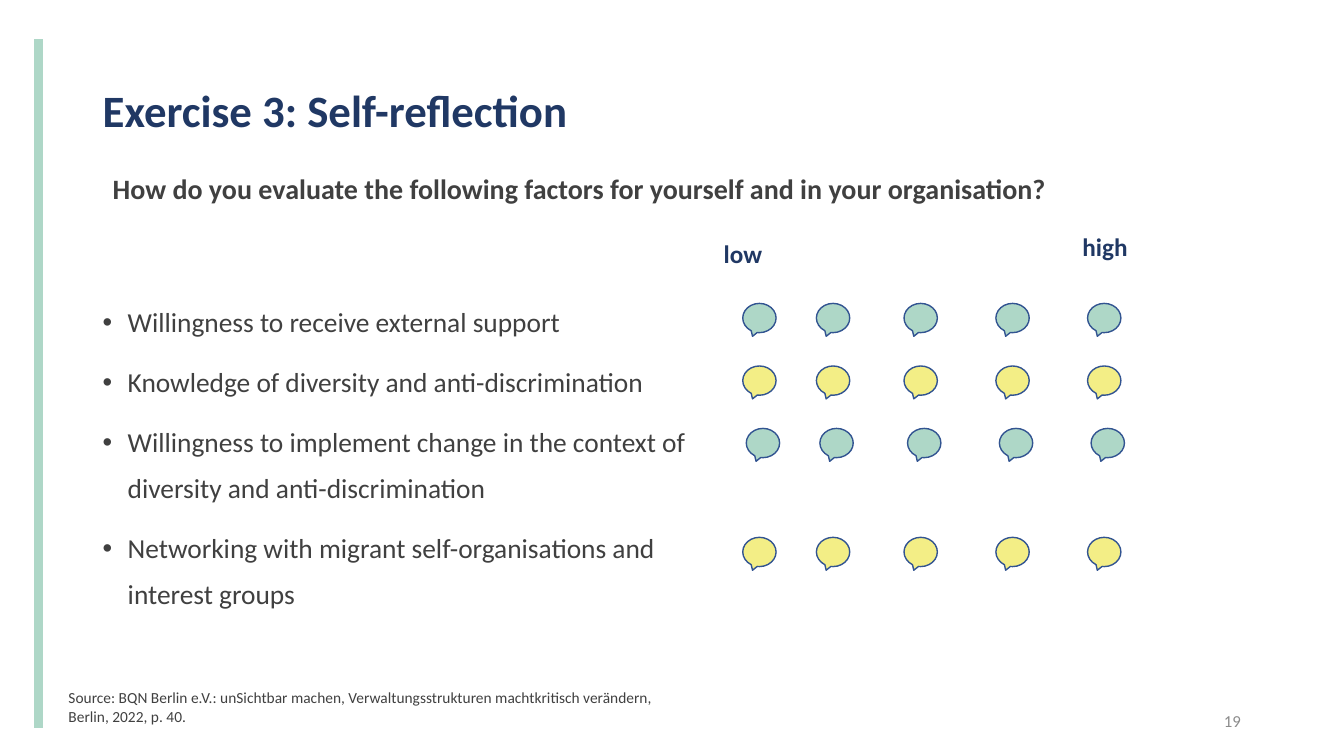
"""Build the self-reflection exercise slide with its rating scale."""
from lxml import etree
from pptx import Presentation
from pptx.dml.color import RGBColor
from pptx.enum import shapes, text
from pptx.oxml import ns
from pptx.util import Pt

FONT = "Calibri"
NAVY, GREY, PALE_GREY = "203864", "404040", "8C8C8C"
GREEN, YELLOW, OUTLINE = "AED7C7", "F3EE86", "325491"

TITLE = "Exercise 3: Self-reflection"
FACTORS = [
    "Willingness to receive external support",
    "Knowledge of diversity and anti-discrimination",
    "Willingness to implement change in the context of diversity and anti-discrimination",
    "Networking with migrant self-organisations and interest groups",
]
QUESTION = "How do you evaluate the following factors for yourself and in your organisation?"
SOURCE = ("Source: BQN Berlin e.V.: unSichtbar machen, Verwaltungsstrukturen "
          "machtkritisch verändern, Berlin, 2022, p. 40.")

# text, (left, top, width, height), size, colour, bold, wrap
LABELS = [
    (QUESTION, (73.4, 118.8, 686.9, 31.7), 20, GREY, True, False),
    ("low", (509.8, 167, 44, 28.8), 18, NAVY, True, True),
    ("high", (766.1, 162, 61.2, 28.8), 18, NAVY, True, True),
    (SOURCE, (41.8, 488.2, 450, 33.8), 11, GREY, False, True),
]
PAGE = ("19", (843.1, 500.4, 50.4, 28.8), 12, PALE_GREY, False, True)

RATING_LEFTS = [530.6, 583.2, 645.8, 711.4, 776.9]
# top, shift to the right, fill
RATING_ROWS = [(216.7, 0, GREEN), (261.4, 0, YELLOW), (306, 2.5, GREEN), (383.8, 0, YELLOW)]
BUBBLE = (23.8, 20.9)


def colour(value):
    return RGBColor.from_string(value)


def points(values):
    return [Pt(value) for value in values]


def style(paragraph, size, value, bold=False):
    font = paragraph.font
    font.name, font.size, font.bold = FONT, Pt(size), bold
    font.color.rgb = colour(value)


def add_label(slide, words, box, size, value, bold, wrap):
    frame = slide.shapes.add_textbox(*points(box)).text_frame
    frame.word_wrap = wrap
    paragraph = frame.paragraphs[0]
    paragraph.text = words
    style(paragraph, size, value, bold)
    return frame


def add_bar(slide):
    bar = slide.shapes.add_connector(
        shapes.MSO_CONNECTOR.STRAIGHT, *points((27.4, 28.1, 27.4, 519.8)))
    bar.line.color.rgb = colour(GREEN)
    bar.line.width = Pt(6)
    etree.SubElement(bar._element.spPr, ns.qn("a:effectLst"))


def add_title(slide):
    title = slide.shapes.title
    title.left, title.top, title.width, title.height = points((66.2, 28.8, 828, 104.4))
    frame = title.text_frame
    frame.text = TITLE
    frame.vertical_anchor = text.MSO_ANCHOR.MIDDLE
    paragraph = frame.paragraphs[0]
    paragraph.alignment = text.PP_ALIGN.LEFT
    paragraph.line_spacing = 0.9
    style(paragraph, 32, NAVY, True)


def add_factors(slide):
    frame = slide.shapes.add_textbox(*points((66.2, 205.2, 434.9, 257))).text_frame
    frame.word_wrap = True
    frame.text = "\n".join(FACTORS)
    for index, paragraph in enumerate(frame.paragraphs):
        paragraph.line_spacing = 1.4
        paragraph.space_before = Pt(10 if index else 0)
        properties = paragraph._p.get_or_add_pPr()
        properties.set("marL", str(Pt(18)))
        properties.set("indent", str(Pt(-18)))
        etree.SubElement(properties, ns.qn("a:buFont"), typeface="Arial")
        etree.SubElement(properties, ns.qn("a:buChar"), char="•")
        style(paragraph, 19.6, GREY)


def add_ratings(slide):
    for top, shift, fill in RATING_ROWS:
        for left in RATING_LEFTS:
            bubble = slide.shapes.add_shape(
                shapes.MSO_SHAPE.OVAL_CALLOUT, *points((left + shift, top, *BUBBLE)))
            bubble.shadow.inherit = False
            bubble.fill.solid()
            bubble.fill.fore_color.rgb = colour(fill)
            bubble.line.color.rgb = colour(OUTLINE)
            bubble.line.width = Pt(1)


def main():
    presentation = Presentation()
    presentation.slide_width, presentation.slide_height = Pt(960), Pt(540)
    slide = presentation.slides.add_slide(presentation.slide_layouts[5])
    add_bar(slide)
    add_title(slide)
    add_factors(slide)
    for label in LABELS:
        add_label(slide, *label)
    page = add_label(slide, *PAGE)
    page.vertical_anchor = text.MSO_ANCHOR.MIDDLE
    page.paragraphs[0].alignment = text.PP_ALIGN.RIGHT
    add_ratings(slide)
    presentation.save("out.pptx")


if __name__ == "__main__":
    main()
